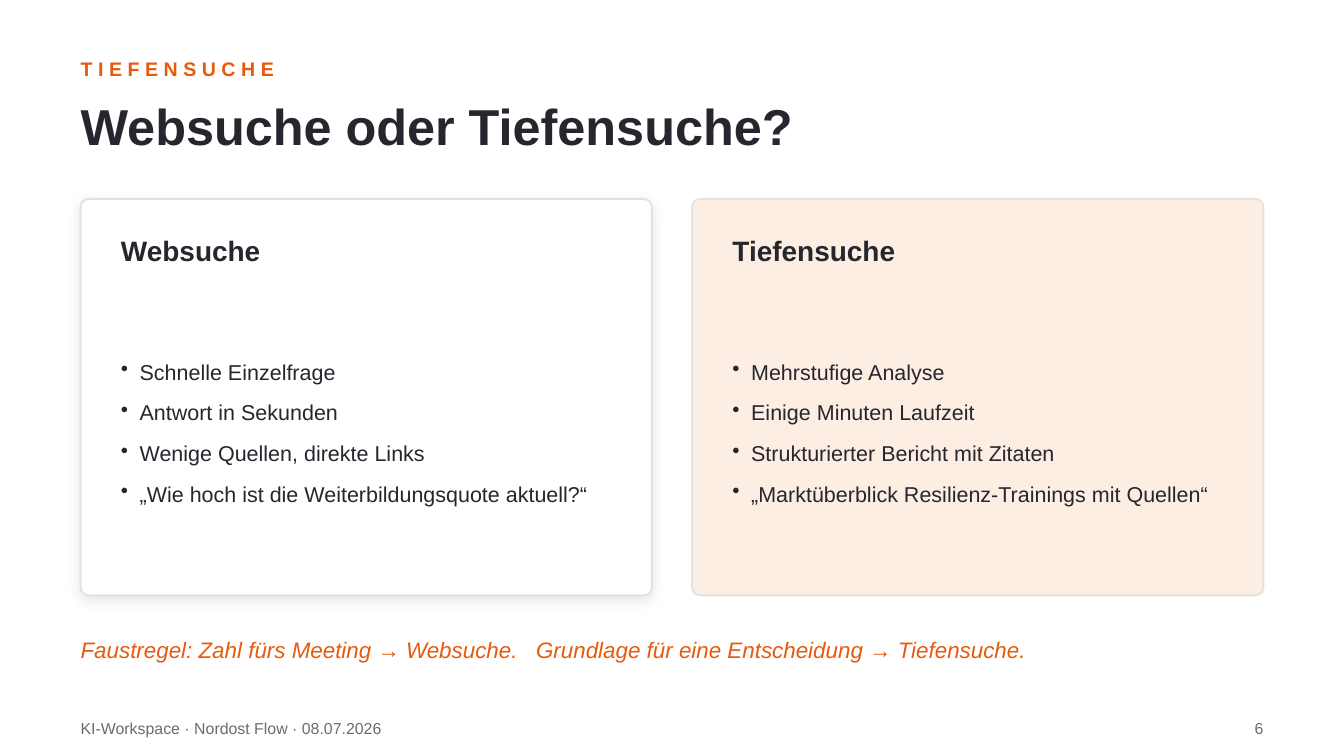
from lxml import etree
from pptx import Presentation
from pptx.dml.color import RGBColor
from pptx.enum import shapes, text
from pptx.oxml import ns
from pptx.util import Pt

COLORS = {
    "paper": "FFFFFF",
    "ink": "26262E",
    "accent": "E8590C",
    "tint": "FDEEE3",
    "border": "E4E2DF",
    "muted": "6B6B75",
    "shadow": "000000",
}
MARGIN, CONTENT_W, CARD_GAP, CARD_PAD = 43.2, 633.6, 21.6, 21.6
CARDS = [
    ("Websuche", "paper", True, [
        "Schnelle Einzelfrage",
        "Antwort in Sekunden",
        "Wenige Quellen, direkte Links",
        "„Wie hoch ist die Weiterbildungsquote aktuell?“",
    ]),
    ("Tiefensuche", "tint", False, [
        "Mehrstufige Analyse",
        "Einige Minuten Laufzeit",
        "Strukturierter Bericht mit Zitaten",
        "„Marktüberblick Resilienz-Trainings mit Quellen“",
    ]),
]


def rgb(name):
    """Return the named colour."""
    return RGBColor.from_string(COLORS[name])


def add_child(parent, tag, **attrs):
    """Append a DrawingML element with the given attributes."""
    child = etree.SubElement(parent, ns.qn(tag))
    for key, value in attrs.items():
        child.set(key, str(value))
    return child


def add_text(s, box, lines, size, color="ink", bold=False, italic=False, align=None):
    """Add a vertically centred text box and return its text frame."""
    tf = s.shapes.add_textbox(*map(Pt, box)).text_frame
    tf.word_wrap = True
    tf.vertical_anchor = text.MSO_ANCHOR.MIDDLE
    tf.margin_left = tf.margin_top = tf.margin_right = tf.margin_bottom = 0
    tf.text = "\n".join(lines)
    for p in tf.paragraphs:
        p.alignment = align
        for r in p.runs:
            r.font.name = "Arial"
            r.font.size = Pt(size)
            r.font.bold = bold
            r.font.italic = italic
            r.font.color.rgb = rgb(color)
    return tf


def add_bullets(s, box, lines):
    """Add a bulleted list with a hanging indent."""
    tf = add_text(s, box, lines, 11.5)
    for p in tf.paragraphs:
        p.space_after = Pt(8)
        pPr = p._p.get_or_add_pPr()
        pPr.set("marL", str(Pt(10)))
        pPr.set("indent", str(Pt(-10)))
        add_child(pPr, "a:buChar", char="•")


def add_shadow(sp):
    """Give a shape a soft shadow below it."""
    effects = sp._element.spPr.find(ns.qn("a:effectLst"))
    outer = add_child(effects, "a:outerShdw", blurRad=Pt(7), dist=Pt(2),
                      dir=5400000, algn="bl", rotWithShape=0)
    color = add_child(outer, "a:srgbClr", val=COLORS["shadow"])
    add_child(color, "a:alpha", val=10000)


def add_header(s, box):
    """Place the kicker and the title."""
    x, y, w, h = box
    tf = add_text(s, (x, y, w, 18.72), ["TIEFENSUCHE"], 10.5, "accent", bold=True)
    tf.paragraphs[0].runs[0].font._element.set("spc", "300")
    add_text(s, (x, y + h - 44.64, w, 44.64), ["Websuche oder Tiefensuche?"], 27, bold=True)


def add_card(s, box, title, fill, raised, lines):
    """Place a rounded card with a title and bullets."""
    x, y, w, h = box
    sp = s.shapes.add_shape(shapes.MSO_SHAPE.ROUNDED_RECTANGLE, *map(Pt, box))
    sp.adjustments[0] = 0.02
    sp.fill.solid()
    sp.fill.fore_color.rgb = rgb(fill)
    sp.line.color.rgb = rgb("border")
    sp.line.width = Pt(1)
    sp.shadow.inherit = False
    if raised:
        add_shadow(sp)
    inner_w = w - 2 * CARD_PAD
    add_text(s, (x + CARD_PAD, y + 15.84, inner_w, 23.04), [title], 15, bold=True)
    add_bullets(s, (x + CARD_PAD, y + 46.08, inner_w, h - 54), lines)


def add_cards(s, box):
    """Place the cards side by side in equal widths."""
    x, y, w, h = box
    card_w = (w - CARD_GAP * (len(CARDS) - 1)) / len(CARDS)
    for i, card in enumerate(CARDS):
        add_card(s, (x + i * (card_w + CARD_GAP), y, card_w, h), *card)


def add_rule(s, box):
    """Place the rule of thumb, its two halves parted by a tab stop."""
    rule = "Faustregel: Zahl fürs Meeting → Websuche.\tGrundlage für eine Entscheidung → Tiefensuche."
    tf = add_text(s, box, [rule], 12, "accent", italic=True)
    tabs = add_child(tf.paragraphs[0]._p.get_or_add_pPr(), "a:tabLst")
    add_child(tabs, "a:tab", pos=Pt(244), algn="l")


def add_footer(s, box):
    """Place the footer text and the page number."""
    x, y, w, h = box
    add_text(s, (x, y, 432, h), ["KI-Workspace · Nordost Flow · 08.07.2026"], 8.5, "muted")
    add_text(s, (x + w - 43.2, y, 43.2, h), ["6"], 8.5, "muted", align=text.PP_ALIGN.RIGHT)


def main():
    """Build and save the slide."""
    prs = Presentation()
    prs.slide_width, prs.slide_height = Pt(720), Pt(405)
    s = prs.slides.add_slide(prs.slide_layouts[6])
    s.background.fill.solid()
    s.background.fill.fore_color.rgb = rgb("paper")
    add_header(s, (MARGIN, 27.36, CONTENT_W, 61.92))
    add_cards(s, (MARGIN, 106.56, CONTENT_W, 212.4))
    add_rule(s, (MARGIN, 335.52, CONTENT_W, 24.48))
    add_footer(s, (MARGIN, 381.6, CONTENT_W, 17.28))
    prs.save("out.pptx")


if __name__ == "__main__":
    main()
